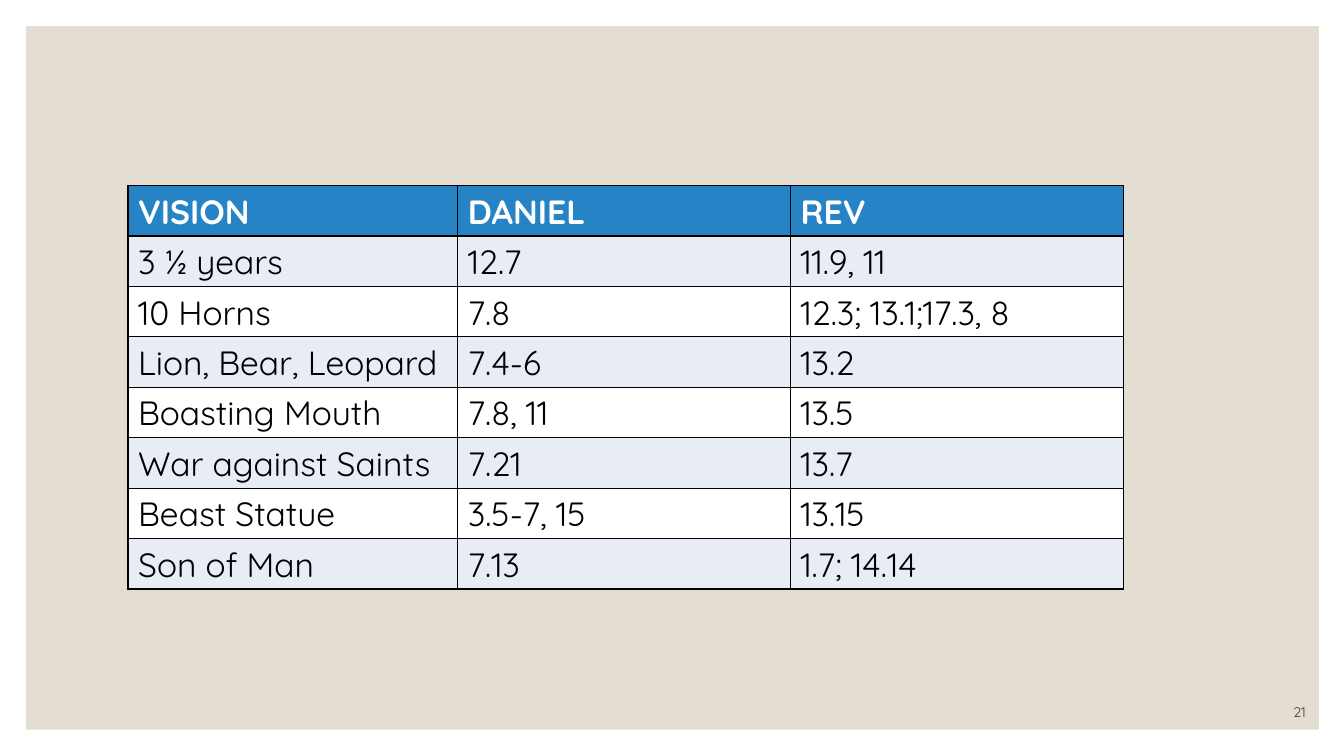
from dataclasses import dataclass

from lxml import etree
from pptx import Presentation
from pptx.dml.color import RGBColor
from pptx.enum import shapes, text
from pptx.oxml import ns
from pptx.util import Inches, Pt

FONT = "Quicksand"
COLORS = {
    "panel": "E3DED1",
    "head": "2683C6",
    "band": "E8EDF5",
    "white": "FFFFFF",
    "black": "000000",
    "number": "404040",
}
WIDTHS = (3.27, 3.3, 3.3)
HEIGHT = 0.41


@dataclass
class Vision:
    name: str
    daniel: str
    rev: str


VISIONS = [
    Vision("VISION", "DANIEL", "REV"),
    Vision("3 ½ years", "12.7", "11.9, 11"),
    Vision("10 Horns", "7.8", "12.3; 13.1;17.3, 8"),
    Vision("Lion, Bear, Leopard", "7.4-6", "13.2"),
    Vision("Boasting Mouth", "7.8, 11", "13.5"),
    Vision("War against Saints", "7.21", "13.7"),
    Vision("Beast Statue", "3.5-7, 15", "13.15"),
    Vision("Son of Man", "7.13", "1.7; 14.14"),
]


def color(name: str) -> RGBColor:
    return RGBColor.from_string(COLORS[name])


def style(frame, size: float, tint: str, bold: bool = False) -> None:
    """Format every run of a text frame."""
    for para in frame.paragraphs:
        for run in para.runs:
            run.font.name = FONT
            run.font.size = Pt(size)
            run.font.bold = bold
            run.font.color.rgb = color(tint)


def border(cell) -> None:
    """Draw a thin black line on all four sides of a cell."""
    props = cell._tc.get_or_add_tcPr()
    for side in ("lnL", "lnR", "lnT", "lnB"):
        line = etree.SubElement(props, ns.qn(f"a:{side}"), w=str(Pt(1)))
        fill = etree.SubElement(line, ns.qn("a:solidFill"))
        etree.SubElement(fill, ns.qn("a:srgbClr"), val=COLORS["black"])


def panel(slide) -> None:
    box = slide.shapes.add_shape(
        shapes.MSO_SHAPE.RECTANGLE,
        Inches(0.26), Inches(0.26), Inches(12.82), Inches(6.98),
    )
    box.shadow.inherit = False
    box.fill.solid()
    box.fill.fore_color.rgb = color("panel")
    box.line.fill.background()


def number(slide) -> None:
    box = slide.shapes.add_textbox(
        Inches(11.45), Inches(6.9), Inches(1.6), Inches(0.3)
    )
    frame = box.text_frame
    frame.word_wrap = True
    frame.vertical_anchor = text.MSO_ANCHOR.BOTTOM
    frame.text = "21"
    frame.paragraphs[0].alignment = text.PP_ALIGN.RIGHT
    style(frame, 10, "number")


def grid(slide, visions: list[Vision]) -> None:
    table = slide.shapes.add_table(
        len(visions), len(WIDTHS), Inches(1.27), Inches(1.84),
        Inches(sum(WIDTHS)), Inches(HEIGHT * len(visions)),
    ).table
    for col, width in zip(table.columns, WIDTHS):
        col.width = Inches(width)
    for i, vision in enumerate(visions):
        head = i == 0
        fill = "head" if head else "band" if i % 2 else "white"
        table.rows[i].height = Inches(HEIGHT)
        words = (vision.name, vision.daniel, vision.rev)
        for cell, word in zip(table.rows[i].cells, words):
            border(cell)
            cell.fill.solid()
            cell.fill.fore_color.rgb = color(fill)
            cell.text_frame.text = word
            style(cell.text_frame, 24, "white" if head else "black", head)


def main() -> None:
    deck = Presentation()
    deck.slide_width = Inches(13.33)
    deck.slide_height = Inches(7.5)
    slide = deck.slides.add_slide(deck.slide_layouts[6])
    panel(slide)
    number(slide)
    grid(slide, VISIONS)
    deck.save("out.pptx")


if __name__ == "__main__":
    main()
